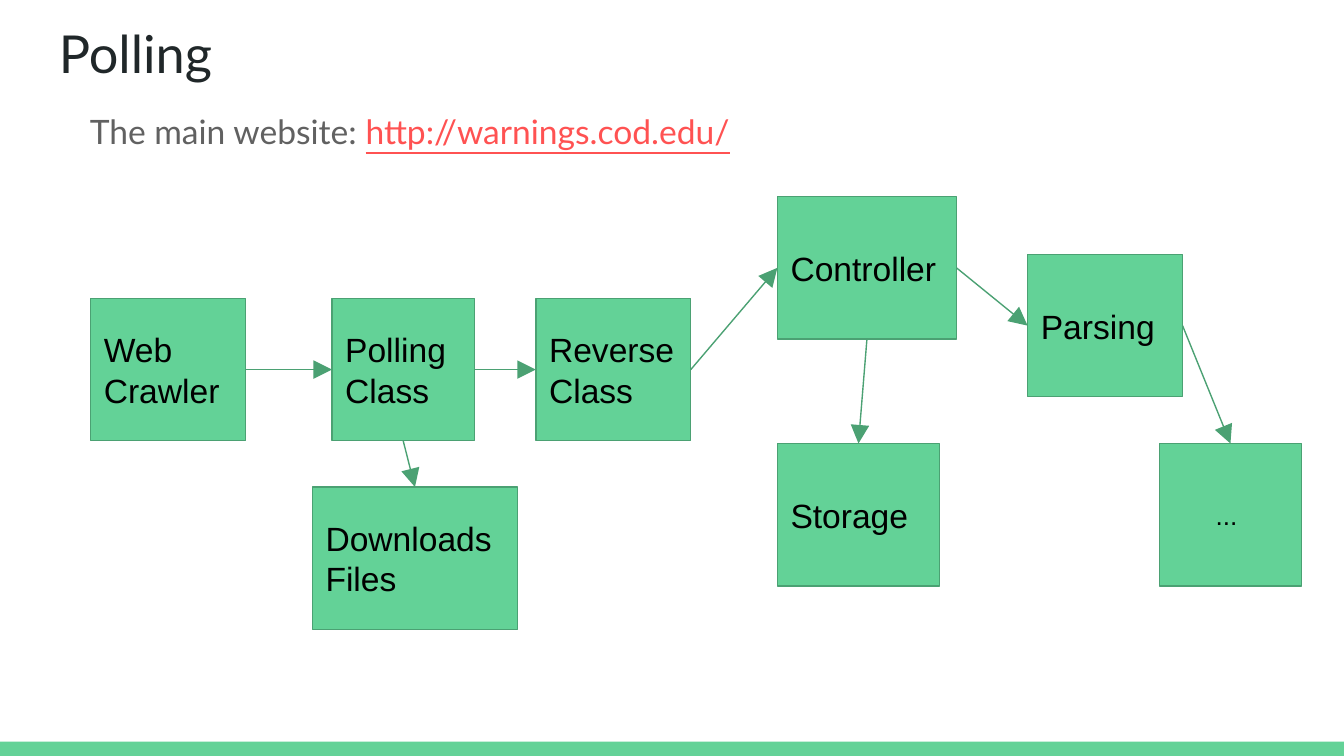
from lxml import etree
from pptx import Presentation, util as u
from pptx.dml.color import RGBColor
from pptx.enum import shapes, text
from pptx.oxml.ns import qn

THEME = dict(
    green="63D297", edge="4BA173", dark="202729", grey="616161",
    link="FF5252", ink="000000", head="Lato", body="Arial",
    big=28, mid=18, small=14, line=0.75,
)
COLS, ROWS = 100, 56.25  # square grid cells
CELL = u.Inches(0.1)
TALL = 10.6  # height of every box, in rows

TITLE = "Polling"
INTRO = [("The main website: ", "grey", False),
         ("http://warnings.cod.edu/", "link", True)]

# name: (label, left column, top row, width in columns)
BOXES = {
    "crawl": ("Web Crawler", 6.74, 22.2, 11.53),
    "poll": ("Polling Class", 24.7, 22.2, 10.6),
    "rev": ("Reverse Class", 39.87, 22.2, 11.53),
    "ctrl": ("Controller", 57.84, 14.63, 13.33),
    "parse": ("Parsing", 76.46, 18.93, 11.53),
    "store": ("Storage", 57.84, 33, 12.07),
    "more": ("...", 86.27, 33, 10.57),
    "files": ("Downloads Files", 23.24, 36.24, 15.27),
}
TOP, LEFT, BOTTOM, RIGHT = range(4)  # connection sites of a rectangle
LINKS = [
    ("crawl", RIGHT, "poll", LEFT),
    ("poll", RIGHT, "rev", LEFT),
    ("rev", RIGHT, "ctrl", LEFT),
    ("ctrl", RIGHT, "parse", LEFT),
    ("parse", RIGHT, "more", TOP),
    ("ctrl", BOTTOM, "store", TOP),
    ("poll", BOTTOM, "files", TOP),
]


def color(name):
    return RGBColor.from_string(THEME[name])


def grid(*cells):
    return [round(c * CELL) for c in cells]


def write(shape, runs, font="body", size="mid", anchor="MIDDLE", indent=(0, 0)):
    """Fill a shape with one paragraph of (text, colour, underline) runs."""
    frame = shape.text_frame
    frame.word_wrap = True
    frame.vertical_anchor = text.MSO_ANCHOR[anchor]
    for side in ("left", "right", "top", "bottom"):
        setattr(frame, "margin_" + side, CELL)
    para = frame.paragraphs[0]
    para.alignment = text.PP_ALIGN.LEFT
    props = para._p.get_or_add_pPr()
    for key, val in zip(("marL", "indent"), grid(*indent)):
        props.set(key, str(val))
    for words, tint, under in runs:
        run = para.add_run()
        run.text = words
        run.font.name = THEME[font]
        run.font.size = u.Pt(THEME[size])
        run.font.color.rgb = color(tint)
        if under:
            run.font.underline = True
    return para


def rect(slide, area, edge=None):
    shape = slide.shapes.add_shape(shapes.MSO_SHAPE.RECTANGLE, *grid(*area))
    shape.shadow.inherit = False
    shape.fill.solid()
    shape.fill.fore_color.rgb = color("green")
    if edge:
        shape.line.color.rgb = color(edge)
        shape.line.width = u.Pt(THEME["line"])
    else:
        shape.line.fill.background()
    return shape


def arrow(slide, start, out, end, into):
    wire = slide.shapes.add_connector(shapes.MSO_CONNECTOR.STRAIGHT, 0, 0, 0, 0)
    wire.begin_connect(start, out)
    wire.end_connect(end, into)
    wire.line.color.rgb = color("edge")
    wire.line.width = u.Pt(THEME["line"])
    tip = etree.SubElement(wire.line._get_or_add_ln(), qn("a:tailEnd"))
    for key, val in (("type", "triangle"), ("w", "lg"), ("len", "lg")):
        tip.set(key, val)
    etree.SubElement(wire._element.spPr, qn("a:effectLst"))


def main():
    deck = Presentation()
    deck.slide_width, deck.slide_height = grid(COLS, ROWS)
    slide = deck.slides.add_slide(deck.slide_layouts[6])

    rect(slide, (0, ROWS - 1.07, COLS, 1.07))
    title = slide.shapes.add_textbox(*grid(3.4, 0.6, 93.2, 6.3))
    write(title, [(TITLE, "dark", False)], font="head", size="big", anchor="TOP")
    intro = slide.shapes.add_textbox(*grid(3.2, 6.8, 93.7, 6.8))
    para = write(intro, INTRO, font="head", anchor="TOP", indent=(5, -2.5))
    para.line_spacing = 1.15
    para.space_after = u.Pt(16)

    made = {}
    for name, (label, left, top, wide) in BOXES.items():
        made[name] = rect(slide, (left, top, wide, TALL), edge="edge")
        style = dict(size="small", indent=(3.2, 0)) if name == "more" else {}
        write(made[name], [(label, "ink", False)], **style)
    for start, out, end, into in LINKS:
        arrow(slide, made[start], out, made[end], into)

    deck.save("out.pptx")


if __name__ == "__main__":
    main()
